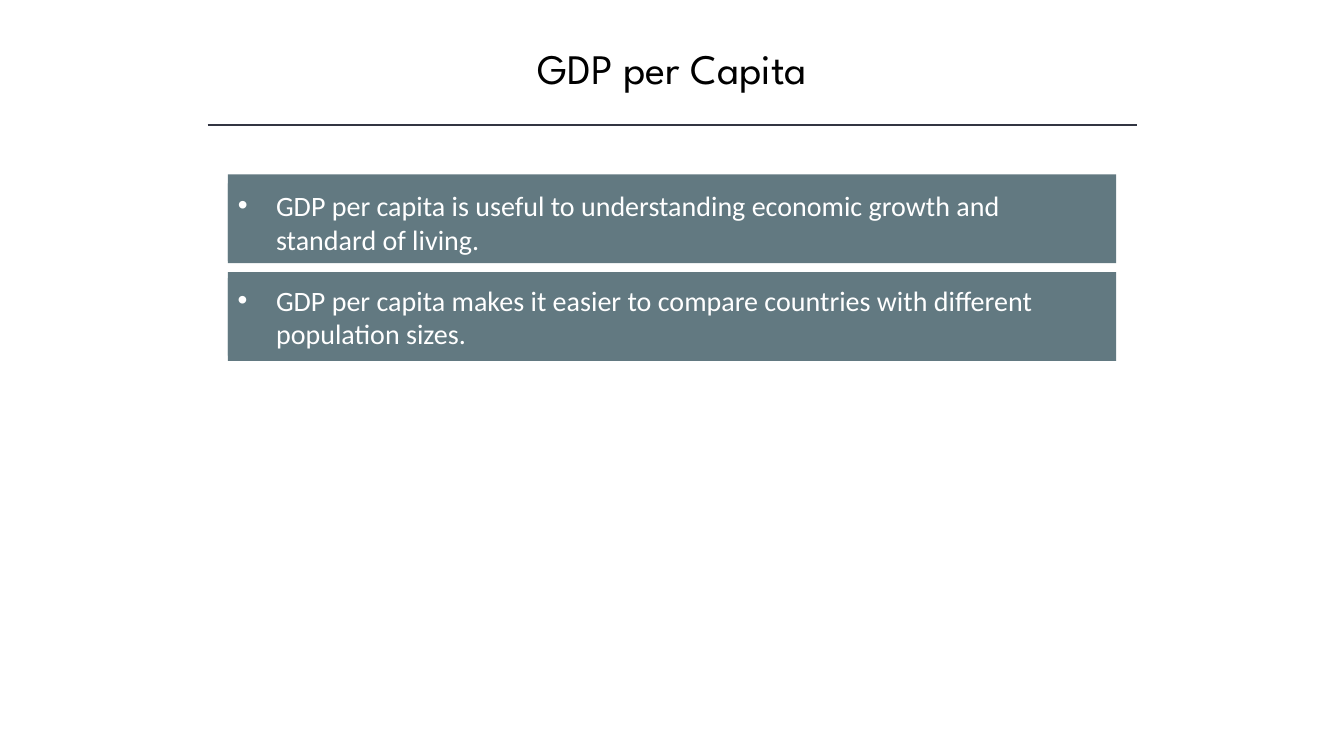
from dataclasses import dataclass

import pptx
import pptx.dml.color
import pptx.enum.shapes
import pptx.enum.text
import pptx.oxml
import pptx.oxml.ns
import pptx.util

Inches = pptx.util.Inches
Pt = pptx.util.Pt
SLATE = "627981"


@dataclass
class Point:
    text: str
    panel_top: float
    text_top: float
    text_width: float


POINTS = [
    Point("GDP per capita is useful to understanding economic growth and standard of living.",
          1.73, 1.82, 8.71),
    Point("GDP per capita makes it easier to compare countries with different population sizes.",
          2.7, 2.76, 8.54),
]


def rgb(value: str) -> pptx.dml.color.RGBColor:
    return pptx.dml.color.RGBColor.from_string(value)


def add_run(p, text: str, font: str, size: float, color: str) -> None:
    r = p.add_run()
    r.text = text
    r.font.name = font
    r.font.size = Pt(size)
    r.font.color.rgb = rgb(color)


def add_title(slide, text: str) -> None:
    sp = slide.shapes.title
    sp.left, sp.top, sp.width, sp.height = Inches(1.67), Inches(0.37), Inches(10), Inches(0.61)
    tf = sp.text_frame
    tf.word_wrap = True
    tf.auto_size = pptx.enum.text.MSO_AUTO_SIZE.NONE
    tf.vertical_anchor = pptx.enum.text.MSO_ANCHOR.MIDDLE
    p = tf.paragraphs[0]
    p.alignment = pptx.enum.text.PP_ALIGN.CENTER
    add_run(p, text, "League Spartan", 30, "000000")


def add_rule(slide) -> None:
    line = slide.shapes.add_connector(pptx.enum.shapes.MSO_CONNECTOR.STRAIGHT,
                                      Inches(2.06), Inches(1.24), Inches(11.28), Inches(1.24))
    line.line.color.rgb = rgb("323542")
    line.line.width = Pt(1)
    sp_pr = line._element.spPr
    sp_pr.append(pptx.oxml.parse_xml(f"<a:effectLst {pptx.oxml.ns.nsdecls('a')}/>"))


def add_panel(slide, top: float, width: float, height: float):
    sp = slide.shapes.add_shape(pptx.enum.shapes.MSO_SHAPE.RECTANGLE,
                                Inches(2.26), Inches(top), Inches(width), Inches(height))
    sp.shadow.inherit = False
    sp.fill.solid()
    sp.fill.fore_color.rgb = rgb(SLATE)
    sp.line.fill.background()
    return sp


def add_point(slide, point: Point) -> None:
    add_panel(slide, point.panel_top, 8.81, 0.88)
    tf = add_panel(slide, point.text_top, point.text_width, 0.77).text_frame
    tf.word_wrap = True
    tf.auto_size = pptx.enum.text.MSO_AUTO_SIZE.SHAPE_TO_FIT_TEXT
    tf.vertical_anchor = pptx.enum.text.MSO_ANCHOR.TOP
    p = tf.paragraphs[0]
    p.alignment = pptx.enum.text.PP_ALIGN.LEFT
    p_pr = p._p.get_or_add_pPr()
    p_pr.set("marL", str(Inches(0.38)))
    p_pr.set("indent", str(-Inches(0.38)))
    for tag in ('buFont typeface="Arial"', 'buChar char="•"'):
        p_pr.append(pptx.oxml.parse_xml(f"<a:{tag} {pptx.oxml.ns.nsdecls('a')}/>"))
    add_run(p, point.text, "Calibri", 20, "FFFFFF")


def main() -> None:
    prs = pptx.Presentation()
    prs.slide_width = Inches(13.33)
    prs.slide_height = Inches(7.5)
    slide = prs.slides.add_slide(prs.slide_layouts[5])
    add_rule(slide)
    add_title(slide, "GDP per Capita")
    for point in POINTS:
        add_point(slide, point)
    prs.save("out.pptx")


if __name__ == "__main__":
    main()
